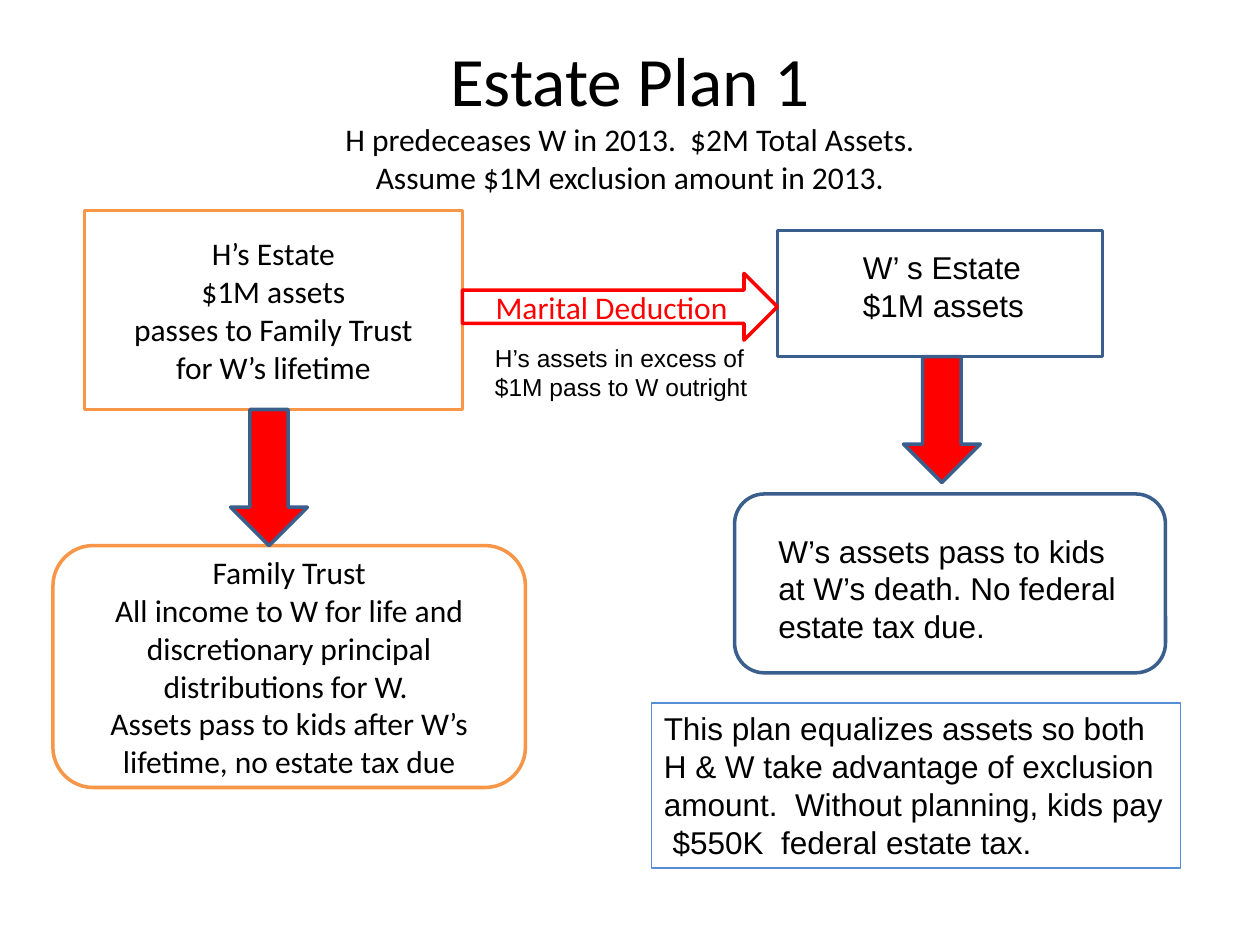
from pptx import Presentation
from pptx.dml.color import RGBColor
from pptx.enum.shapes import MSO_SHAPE
from pptx.enum.text import MSO_ANCHOR, PP_ALIGN
from pptx.util import Inches, Pt

RECT = MSO_SHAPE.RECTANGLE
ROUNDED = MSO_SHAPE.ROUNDED_RECTANGLE
DOWN_ARROW = MSO_SHAPE.DOWN_ARROW
RIGHT_ARROW = MSO_SHAPE.RIGHT_ARROW
MIDDLE, TOP = MSO_ANCHOR.MIDDLE, MSO_ANCHOR.TOP
CENTER, LEFT = PP_ALIGN.CENTER, PP_ALIGN.LEFT

BLACK, WHITE, RED = "000000", "FFFFFF", "FF0000"
ORANGE, NAVY, BLUE = "F79646", "3A5F8C", "558ED5"


def color(hex_string):
    return RGBColor.from_string(hex_string)


def format_span(span, size, font, hex_color=BLACK):
    span.font.size = Pt(size)
    span.font.name = font
    span.font.color.rgb = color(hex_color)


def write(shape, lines, font="Arial", size=18, hex_color=BLACK,
          align=LEFT, anchor=TOP, wrap=True):
    frame = shape.text_frame
    frame.text = "\n".join(lines)
    frame.word_wrap = wrap
    frame.vertical_anchor = anchor
    for para in frame.paragraphs:
        para.alignment = align
        for span in para.runs:
            format_span(span, size, font, hex_color)


def add_box(page, kind, box, line, fill=None, weight=2):
    shape = page.shapes.add_shape(kind, *map(Inches, box))
    shape.shadow.inherit = False
    if fill:
        shape.fill.solid()
        shape.fill.fore_color.rgb = color(fill)
    else:
        shape.fill.background()
    shape.line.color.rgb = color(line)
    shape.line.width = Pt(weight)
    return shape


def add_label(page, box, lines, **style):
    write(page.shapes.add_textbox(*map(Inches, box)), lines, **style)


def add_heading(page, box):
    title = page.shapes.title
    title.left, title.top, title.width, title.height = map(Inches, box)
    frame = title.text_frame
    frame.text = ("Estate Plan 1\vH predeceases W in 2013.  $2M Total Assets."
                  "\vAssume $1M exclusion amount in 2013.")
    frame.vertical_anchor = MIDDLE
    para = frame.paragraphs[0]
    para.alignment = CENTER
    for index, span in enumerate(para.runs):
        format_span(span, 18 if index else 39.6, "Calibri")


def add_down_arrow(page, left, top, height):
    add_box(page, DOWN_ARROW, (left, top, 0.61, height), NAVY, RED)


def add_husband_column(page, left, top):
    centered = {"font": "Calibri", "align": CENTER, "anchor": MIDDLE}
    estate = add_box(page, RECT, (left + 0.25, top, 3, 1.58), ORANGE, WHITE)
    write(estate, ["H’s Estate", "$1M assets", "passes to Family Trust",
                   "for W’s lifetime"], **centered)
    trust = add_box(page, ROUNDED, (left, top + 2.66, 3.75, 1.92), ORANGE, WHITE)
    write(trust, ["Family Trust", "All income to W for life and",
                  "discretionary principal", "distributions for W. ",
                  "Assets pass to kids after W’s",
                  "lifetime, no estate tax due"], **centered)
    add_down_arrow(page, left + 1.41, top + 1.58, 1.08)


def add_wife_column(page, left, top):
    add_box(page, RECT, (left + 0.34, top, 2.58, 1), NAVY)
    add_label(page, (left + 0.92, top + 0.09, 1.49, 0.71),
              ["W’ s Estate", "$1M assets"], wrap=False)
    add_down_arrow(page, left + 1.34, top + 1, 1)
    add_box(page, ROUNDED, (left, top + 2.09, 3.42, 1.42), NAVY)
    add_label(page, (left + 0.25, top + 2.34, 3, 1.01),
              ["W’s assets pass to kids at W’s death. No federal estate tax due."])


def add_conclusion(page, box):
    note = add_box(page, RECT, box, BLUE, weight=0.75)
    write(note, ["This plan equalizes assets so both",
                 "H & W take advantage of exclusion",
                 "amount.  Without planning, kids pay",
                 " $550K  federal estate tax."], wrap=False)


def add_marital_deduction(page, left, top):
    arrow = add_box(page, RIGHT_ARROW, (left, top, 2.5, 0.53), RED, WHITE)
    write(arrow, ["Marital Deduction"], font="Calibri", hex_color=RED,
          align=CENTER, anchor=MIDDLE)
    add_label(page, (left + 0.16, top + 0.5, 2.25, 0.57),
              ["H’s assets in excess of", "$1M pass to W outright"],
              size=14, wrap=False)


def main():
    deck = Presentation()
    deck.slide_width, deck.slide_height = Inches(10), Inches(7.5)
    page = deck.slides.add_slide(deck.slide_layouts[5])  # title only
    add_heading(page, (0.5, 0.3, 9, 1.25))
    add_husband_column(page, 0.42, 1.67)
    add_wife_column(page, 5.83, 1.83)
    add_conclusion(page, (5.17, 5.58, 4.2, 1.31))
    add_marital_deduction(page, 3.67, 2.17)
    deck.save("out.pptx")


if __name__ == "__main__":
    main()
